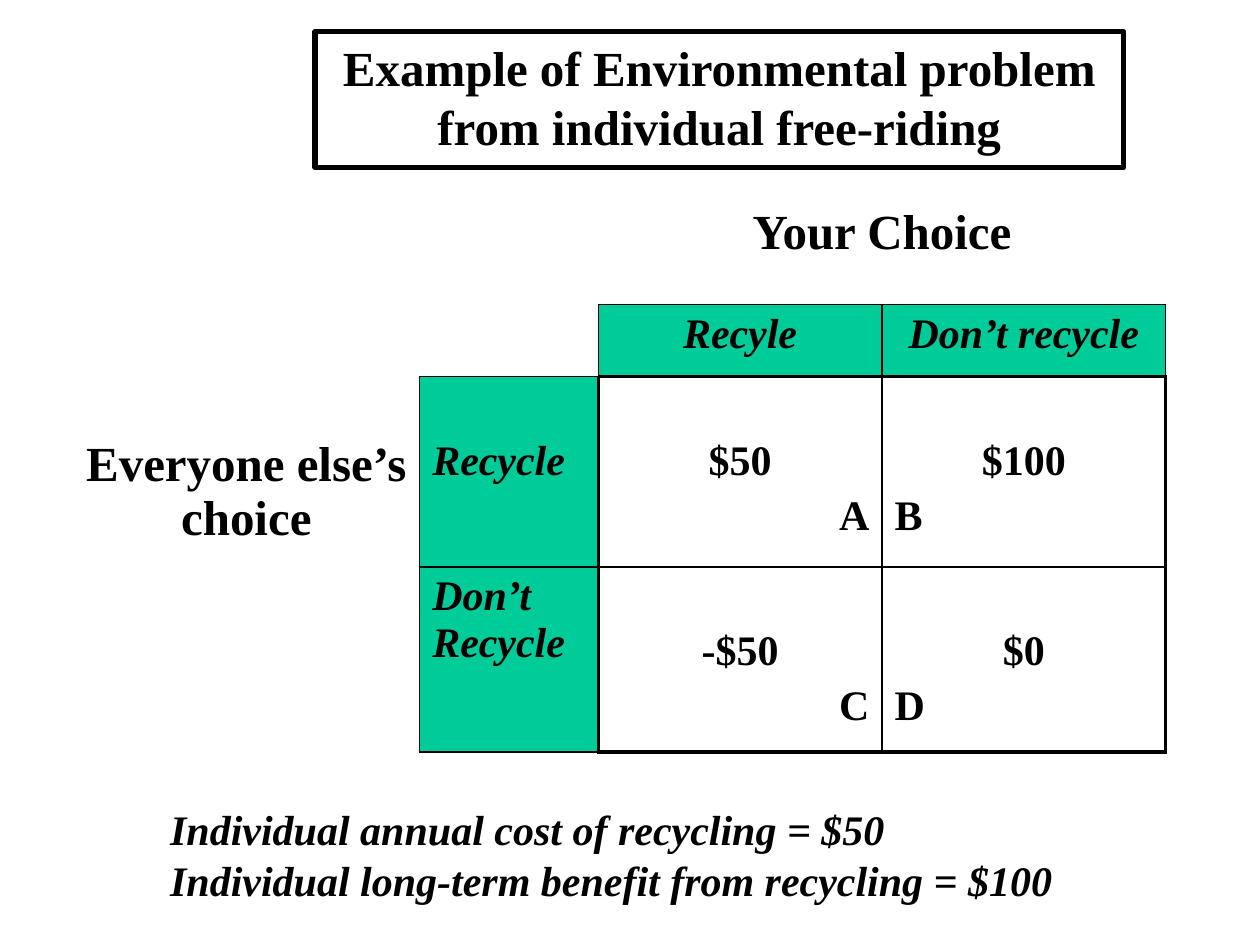
from lxml.etree import SubElement
from pptx import Presentation
from pptx.dml.color import RGBColor
from pptx.enum.shapes import MSO_SHAPE
from pptx.enum.text import MSO_ANCHOR, PP_ALIGN as Align
from pptx.oxml import parse_xml
from pptx.oxml.ns import nsdecls, qn
from pptx.util import Cm, Pt

THEME = {
    "font": "Times New Roman",
    "ink": RGBColor(0, 0, 0),
    "label_fill": RGBColor(0x00, 0xCC, 0x99),
    "heading_size": 28,
    "body_size": 24,
    "thin": 1,
    "thick": 2.25,
    "frame": 3,
}

TITLE = ["Example of Environmental problem from individual free-riding"]
NOTES = [
    "Individual annual cost of recycling = $50",
    "Individual long-term benefit from recycling = $100",
]
YOUR_CHOICE = "Your Choice"
OTHERS_CHOICE = "Everyone else’s choice"
COLUMN_LABELS = ["Recyle", "Don’t recycle"]
ROW_LABELS = ["Recycle", "Don’t Recycle"]
PAYOFFS = [
    [("$50", "A"), ("$100", "B")],
    [("-$50", "C"), ("$0", "D")],
]

COLUMN_WIDTHS = [6.35, 0.64, 3.6, 5.72, 5.72]
ROW_HEIGHTS = [1.48, 2.12, 1.45, 3.84, 3.73]
TABLE_LEFT, TABLE_TOP = 1.47, 2.54
LABEL_ROW, LABEL_COLUMN = 2, 2
FIRST_ROW, FIRST_COLUMN = 3, 3
LOWERED_TOP = 1.24
MERGES = [
    ((0, 0), (0, 4)),
    ((1, 1), (1, 2)),
    ((1, 3), (1, 4)),
    ((2, 0), (2, 2)),
    ((3, 0), (4, 1)),
]


def write(frame, lines, size=THEME["body_size"], italic=False, aligns=(Align.LEFT,), gap=0):
    """Fill a text frame, one paragraph a line; the last alignment repeats."""
    frame.word_wrap = True
    for index, line in enumerate(lines):
        paragraph = frame.add_paragraph() if index else frame.paragraphs[0]
        paragraph.alignment = aligns[min(index, len(aligns) - 1)]
        paragraph.space_before = Pt(gap if index else 0)
        run = paragraph.add_run()
        run.text = line
        font = run.font
        font.name, font.size = THEME["font"], Pt(size)
        font.bold, font.italic = True, italic
        font.color.rgb = THEME["ink"]


def is_payoff(row, column):
    return FIRST_ROW <= row < len(ROW_HEIGHTS) and FIRST_COLUMN <= column < len(COLUMN_WIDTHS)


def is_framed(row, column):
    in_grid = LABEL_ROW <= row < len(ROW_HEIGHTS) and LABEL_COLUMN <= column < len(COLUMN_WIDTHS)
    return in_grid and (row, column) != (LABEL_ROW, LABEL_COLUMN)


def draw_borders(cell, row, column):
    """Rule the label and payoff cells, with a heavier line round the payoffs."""
    neighbours = [
        ("L", row, column - 1),
        ("R", row, column + 1),
        ("T", row - 1, column),
        ("B", row + 1, column),
    ]
    properties = cell._tc.get_or_add_tcPr()
    for index, (side, *neighbour) in enumerate(neighbours):
        line = parse_xml(f"<a:ln{side} {nsdecls('a')}/>")
        if is_framed(row, column) or is_framed(*neighbour):
            heavy = is_payoff(row, column) != is_payoff(*neighbour)
            line.set("w", str(Pt(THEME["thick" if heavy else "thin"])))
            fill = SubElement(line, qn("a:solidFill"))
            SubElement(fill, qn("a:srgbClr"), val=str(THEME["ink"]))
        else:
            SubElement(line, qn("a:noFill"))
        properties.insert(index, line)


def add_payoff_table(slide):
    table = slide.shapes.add_table(
        len(ROW_HEIGHTS), len(COLUMN_WIDTHS), Cm(TABLE_LEFT), Cm(TABLE_TOP),
        Cm(sum(COLUMN_WIDTHS)), Cm(sum(ROW_HEIGHTS)),
    ).table
    table.first_row = table.horz_banding = False
    for column, width in zip(table.columns, COLUMN_WIDTHS):
        column.width = Cm(width)
    for row, height in zip(table.rows, ROW_HEIGHTS):
        row.height = Cm(height)
    for start, end in MERGES:
        table.cell(*start).merge(table.cell(*end))

    for row in range(len(ROW_HEIGHTS)):
        for column in range(len(COLUMN_WIDTHS)):
            cell = table.cell(row, column)
            if is_framed(row, column) and not is_payoff(row, column):
                cell.fill.solid()
                cell.fill.fore_color.rgb = THEME["label_fill"]
            else:
                cell.fill.background()
            draw_borders(cell, row, column)

    heading = {"size": THEME["heading_size"], "aligns": (Align.CENTER,)}
    others_cell = table.cell(FIRST_ROW, 0)
    others_cell.margin_top = Cm(LOWERED_TOP)
    write(others_cell.text_frame, [OTHERS_CHOICE], **heading)
    write(table.cell(1, FIRST_COLUMN).text_frame, [YOUR_CHOICE], **heading)

    for offset, label in enumerate(COLUMN_LABELS):
        cell = table.cell(LABEL_ROW, FIRST_COLUMN + offset)
        write(cell.text_frame, [label], italic=True, aligns=(Align.CENTER,))
    for offset, label in enumerate(ROW_LABELS):
        cell = table.cell(FIRST_ROW + offset, LABEL_COLUMN)
        if offset == 0:
            cell.margin_top = Cm(LOWERED_TOP)
        write(cell.text_frame, [label], italic=True)
    for row, payoffs in enumerate(PAYOFFS, FIRST_ROW):
        for column, lines in enumerate(payoffs, FIRST_COLUMN):
            cell = table.cell(row, column)
            cell.margin_top = Cm(LOWERED_TOP)
            letter_side = Align.RIGHT if column == FIRST_COLUMN else Align.LEFT
            write(cell.text_frame, lines, aligns=(Align.CENTER, letter_side), gap=4.8)


def add_title(slide):
    title = slide.shapes.add_shape(MSO_SHAPE.RECTANGLE, Cm(6.35), Cm(0.64), Cm(16.3), Cm(2.74))
    title.shadow.inherit = False
    title.fill.background()
    title.line.color.rgb = THEME["ink"]
    title.line.width = Pt(THEME["frame"])
    title.text_frame.vertical_anchor = MSO_ANCHOR.TOP
    write(title.text_frame, TITLE, size=THEME["heading_size"], aligns=(Align.CENTER,))


def add_notes(slide):
    box = slide.shapes.add_textbox(Cm(3.18), Cm(16.08), Cm(19.48), Cm(2.29))
    write(box.text_frame, NOTES, italic=True)


def main():
    presentation = Presentation()
    presentation.slide_width, presentation.slide_height = Cm(25.4), Cm(19.05)
    slide = presentation.slides.add_slide(presentation.slide_layouts[6])
    add_payoff_table(slide)
    add_notes(slide)
    add_title(slide)
    presentation.save("out.pptx")


if __name__ == "__main__":
    main()
